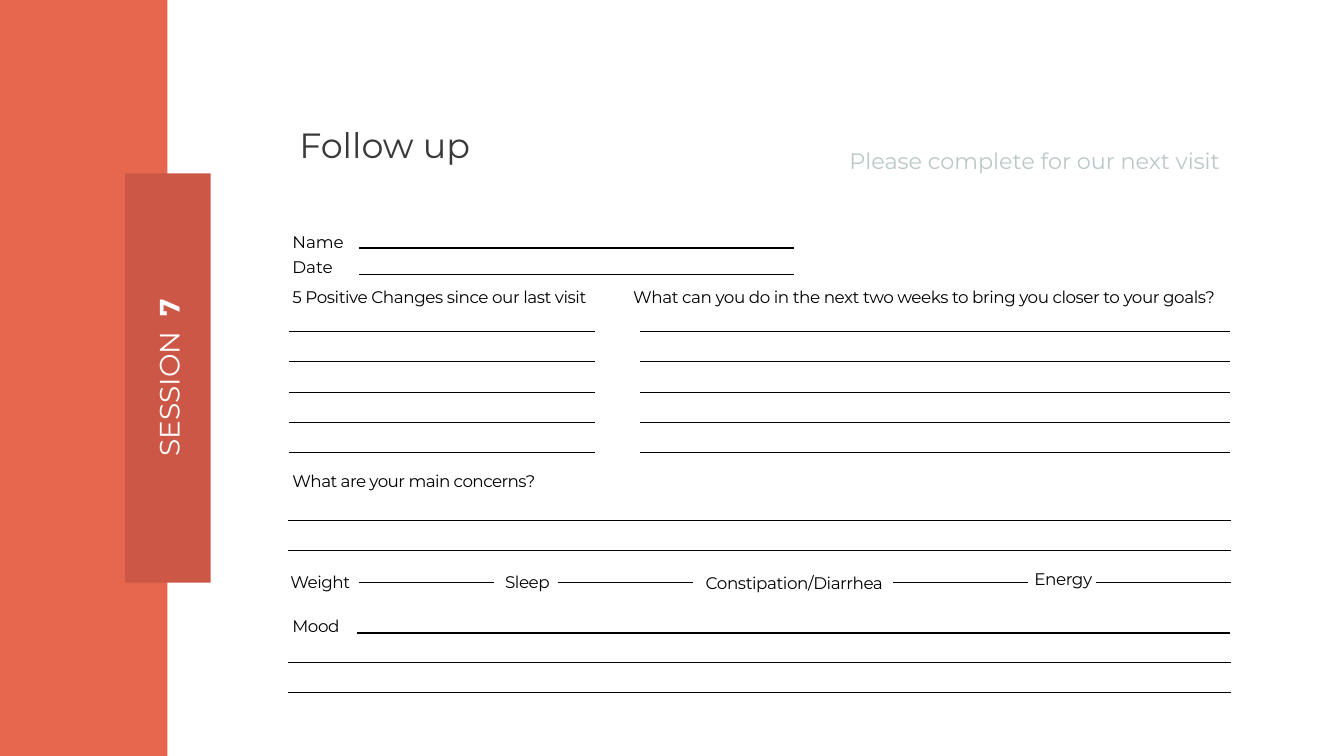
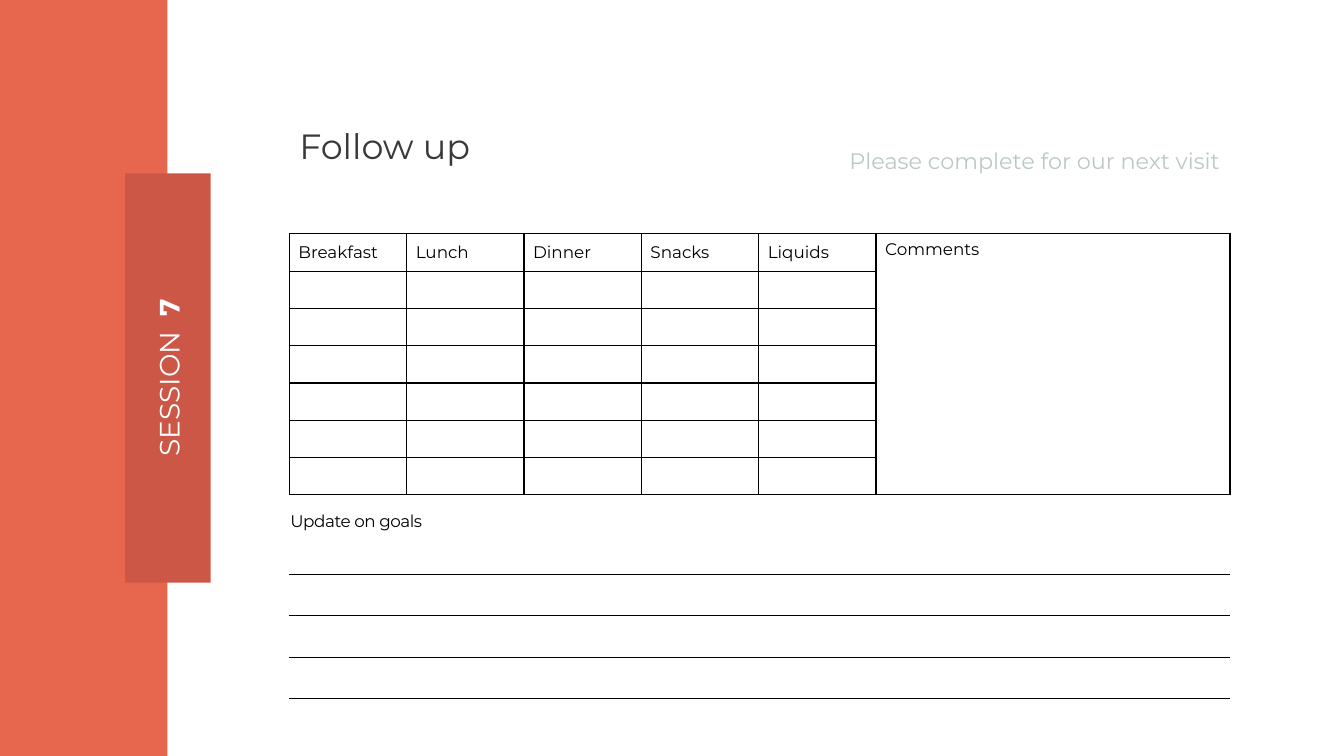
from lxml import etree
from pptx import Presentation
from pptx.dml.color import RGBColor
from pptx.enum import shapes, text
from pptx.oxml import ns
from pptx.util import Inches, Pt

FONT = "Montserrat"
COLORS = {
    "band": "E7664E",
    "tab": "CD5746",
    "white": "FFFFFF",
    "ink": "000000",
    "title": "3B3838",
    "hint": "BCC8C8",
}
PLAIN_TABLE = "{2D5ABB26-0587-4C30-8999-92F81FD0307C}"
LEFT, RIGHT = 2.87, 12.2


def color(name):
    return RGBColor.from_string(COLORS[name])


def style(paragraph, size=12, ink="ink"):
    font = paragraph.font
    font.name, font.size = FONT, Pt(size)
    font.color.rgb = color(ink)


def track(run, points):
    """Set the letter spacing of a run."""
    run._r.get_or_add_rPr().set("spc", str(round(points * 100)))


class Form:
    """The worksheet style and the slide being filled."""

    def __init__(self):
        self.prs = Presentation()
        self.prs.slide_width, self.prs.slide_height = Inches(13.33), Inches(7.5)
        self.slide = None

    def new_page(self, session, title, hint, title_top):
        self.slide = self.prs.slides.add_slide(self.prs.slide_layouts[6])
        self.block(0, 0, 1.66, 7.5, "band")
        self.block(1.24, 1.72, 0.85, 4.06, "tab")
        self.session_label(session)
        self.heading(8.21, 1.19, 3.99, hint, 16, "hint",
                     align=text.PP_ALIGN.RIGHT, leading=Pt(35))
        self.heading(LEFT, title_top, 2.91, title, 25, "title")

    def block(self, x, y, w, h, fill):
        rect = self.slide.shapes.add_shape(
            shapes.MSO_SHAPE.RECTANGLE, Inches(x), Inches(y), Inches(w), Inches(h))
        rect.shadow.inherit = False
        rect.fill.solid()
        rect.fill.fore_color.rgb = color(fill)
        rect.line.fill.background()

    def box(self, x, y, w, h):
        return self.slide.shapes.add_textbox(
            Inches(x), Inches(y), Inches(w), Inches(h))

    def session_label(self, number):
        label = self.box(0.79, 3.53, 1.77, 0.44)
        label.rotation = 270
        label.text_frame.word_wrap = False
        label.text_frame.auto_size = text.MSO_AUTO_SIZE.SHAPE_TO_FIT_TEXT
        paragraph = label.text_frame.paragraphs[0]
        paragraph.alignment = text.PP_ALIGN.CENTER
        style(paragraph, 20, "white")
        word, gap, digit = [paragraph.add_run() for _ in range(3)]
        word.text, gap.text, digit.text = "SESSION", " ", str(number)
        track(gap, 5.2)
        digit.font.bold = True

    def heading(self, x, y, w, words, size, ink, align=None, leading=None):
        frame = self.box(x, y, w, 0.52).text_frame
        frame.word_wrap = True
        frame.auto_size = text.MSO_AUTO_SIZE.SHAPE_TO_FIT_TEXT
        paragraph = frame.paragraphs[0]
        paragraph.text = words
        paragraph.alignment, paragraph.line_spacing = align, leading
        style(paragraph, size, ink)

    def label(self, x, y, w, h, *lines, tracking=0, leading=None, gap=0):
        """Small text without insets, one paragraph for each line."""
        frame = self.box(x, y, w, h).text_frame
        frame.word_wrap = True
        frame.margin_left = Inches(0.01)
        frame.margin_right = frame.margin_top = frame.margin_bottom = 0
        for index, words in enumerate(lines):
            paragraph = frame.add_paragraph() if index else frame.paragraphs[0]
            run = paragraph.add_run()
            run.text = words
            if tracking:
                track(run, tracking)
            if index:
                paragraph.space_before = Pt(gap)
            paragraph.line_spacing = leading
            style(paragraph)

    def line(self, x, y, end):
        rule = self.slide.shapes.add_connector(
            shapes.MSO_CONNECTOR.STRAIGHT,
            Inches(x), Inches(y), Inches(end), Inches(y))
        rule.line.color.rgb = color("ink")
        rule.line.width = Pt(1)
        etree.SubElement(rule._element.spPr, ns.qn("a:effectLst"))

    def table(self, x, y, widths, row_height, rows, sides):
        """Add an empty table whose cells have a border on the given sides."""
        frame = self.slide.shapes.add_table(
            rows, len(widths), Inches(x), Inches(y),
            Inches(sum(widths)), Inches(row_height * rows))
        table = frame.table
        table.first_row = table.horz_banding = False
        table._tbl.tblPr.find(ns.qn("a:tableStyleId")).text = PLAIN_TABLE
        for column, width in zip(table.columns, widths):
            column.width = Inches(width)
        for row in table.rows:
            row.height = Inches(row_height)
            for cell in row.cells:
                self.cell_format(cell, sides)
        return table

    def cell_format(self, cell, sides):
        cell.margin_left = Inches(0.09)
        cell.margin_right = cell.margin_top = cell.margin_bottom = 0
        cell.vertical_anchor = text.MSO_ANCHOR.MIDDLE
        style(cell.text_frame.paragraphs[0])
        properties = cell._tc.get_or_add_tcPr()
        for side in "LRTB":
            border = etree.SubElement(properties, ns.qn("a:ln" + side), w=str(Pt(1)))
            if side in sides:
                fill = etree.SubElement(border, ns.qn("a:solidFill"))
                etree.SubElement(fill, ns.qn("a:srgbClr"), val=COLORS["ink"])
            else:
                etree.SubElement(border, ns.qn("a:noFill"))
        cell.fill.background()

    def writing_lines(self, x, y, w, row_height, rows):
        self.table(x, y, [w], row_height, rows, "TB")


def follow_up_questions(form):
    form.new_page(7, "Follow up", "Please complete for our next visit", 1.18)

    form.label(2.89, 2.3, 0.56, 0.38, "Name", "Date", gap=3.5)
    form.writing_lines(3.56, 2.46, 4.32, 0.26, 1)

    form.label(2.89, 2.84, 4.32, 0.28,
               "5 Positive Changes since our last visit", tracking=-0.3)
    form.label(6.27, 2.84, 6.12, 0.36,
               "What can you do in the next two weeks to bring you closer to your goals?",
               tracking=-0.3)
    for x, width in ((LEFT, 3.03), (6.35, 5.85)):
        form.writing_lines(x, 3.29, width, 0.3, 4)

    form.label(2.89, 4.67, 3.85, 0.2, "What are your main concerns?", tracking=-0.4)
    form.writing_lines(2.86, 5.16, 9.35, 0.3, 1)

    measures = (
        ("Weight", 2.87, 5.57, 0.86, 3.56),
        ("Sleep", 5, 5.57, 0.56, 5.53),
        ("Constipation/Diarrhea", 6.99, 5.58, 2.04, 8.86),
        ("Energy", 10.25, 5.54, 0.7, 10.87),
    )
    for name, x, y, width, start in measures:
        form.label(x, y, width, 0.23, name, tracking=-0.3, leading=1.5)
        form.line(start, 5.78, start + 1.34)

    form.label(2.89, 6.01, 0.56, 0.23, "Mood", tracking=-0.3, leading=1.5)
    form.line(3.54, 6.28, RIGHT)
    form.writing_lines(2.86, 6.57, 9.35, 0.3, 1)


def follow_up_meals(form):
    form.new_page(7, "Follow up", "Please complete for our next visit", 1.19)

    meals = ("Breakfast", "Lunch", "Dinner", "Snacks", "Liquids", "Comments")
    diary = form.table(LEFT, 2.32, [1.164] * 5 + [3.51], 0.37, 7, "LRTB")
    for column, meal in enumerate(meals):
        diary.cell(0, column).text_frame.paragraphs[0].text = meal
    comments = diary.cell(0, 5)
    comments.merge(diary.cell(6, 5))
    comments.vertical_anchor = text.MSO_ANCHOR.TOP
    comments.margin_top = Pt(4)

    form.label(LEFT, 5.07, 2.2, 0.16, "Update on goals", tracking=-0.3)
    form.writing_lines(LEFT, 5.7, RIGHT - LEFT, 0.41, 3)


def main():
    form = Form()
    follow_up_questions(form)
    follow_up_meals(form)
    form.prs.save("out.pptx")


if __name__ == "__main__":
    main()
